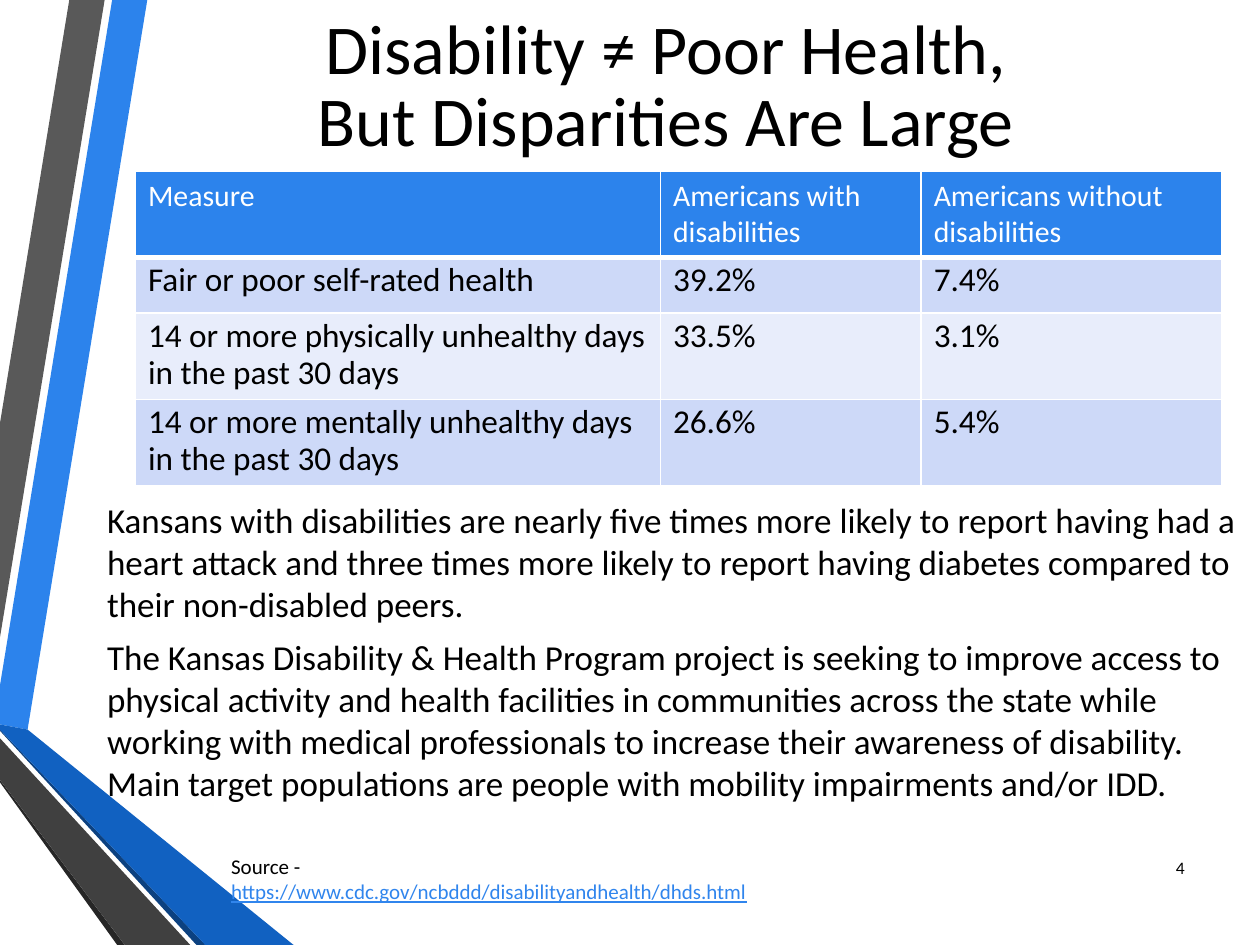
from lxml import etree
from pptx import Presentation
from pptx.dml.color import RGBColor
from pptx.enum.text import MSO_ANCHOR, MSO_AUTO_SIZE, PP_ALIGN
from pptx.oxml.ns import qn
from pptx.util import Pt

MIDDLE = MSO_ANCHOR.MIDDLE
CENTER, RIGHT = PP_ALIGN.CENTER, PP_ALIGN.RIGHT
NO_AUTOFIT = MSO_AUTO_SIZE.NONE

COLORS = {
    "blue": "2C83EC", "mid_blue": "1161C1", "navy": "0C4180",
    "gray": "595959", "dark_gray": "404040", "charcoal": "262626",
    "band": "CDD9F8", "light_band": "E8EDFB", "link": "3085ED",
    "black": "000000", "white": "FFFFFF",
}


def style(paragraph, size, color="black"):
    for run in paragraph.runs:
        run.font.name = "Calibri"
        run.font.size = Pt(size)
        run.font.bold = False
        run.font.color.rgb = RGBColor.from_string(COLORS[color])


def place(shape, left, top, width, height):
    shape.left, shape.top = Pt(left), Pt(top)
    shape.width, shape.height = Pt(width), Pt(height)


prs = Presentation()
prs.slide_width, prs.slide_height = Pt(720), Pt(540)
slide = prs.slides.add_slide(prs.slide_layouts[1])
shapes = slide.shapes
title, body = shapes.title, slide.placeholders[1]

# Ribbons on the left edge
ribbons = [
    ("blue", [(0, 391.7), (0, 414), (15.8, 416.9), (84.2, 0), (64.1, 0)]),
    ("gray", [(59.8, 0), (39.6, 0), (0, 241.9), (0, 364.3)]),
    ("charcoal", [(0, 445.7), (0, 447.1), (67, 540), (71.3, 540)]),
    ("navy", [(0, 416.9), (0, 417.6), (112.3, 540), (117.4, 540)]),
    ("mid_blue", [(0, 416.9), (117.4, 540), (167.8, 540), (15.8, 416.9), (0, 414)]),
    ("dark_gray", [(0, 445.7), (71.3, 540), (108.7, 540), (0, 421.9)]),
]
for color, points in ribbons:
    corners = [(Pt(x), Pt(y)) for x, y in points]
    outline = shapes.build_freeform(*corners[0])
    outline.add_line_segments(corners[1:], close=True)
    ribbon = outline.convert_to_shape()
    ribbon.shadow.inherit = False
    ribbon.fill.solid()
    ribbon.fill.fore_color.rgb = RGBColor.from_string(COLORS[color])
    ribbon.line.fill.background()

# Bring the placeholders in front of the ribbons
for placeholder in (title, body):
    shapes._spTree.append(placeholder._element)

# Title
place(title, 77, -27.4, 607, 156.2)
heading = title.text_frame
heading.text = "Disability ≠ Poor Health,\vBut Disparities Are Large"
heading.auto_size = NO_AUTOFIT
heading.vertical_anchor = MIDDLE
heading.paragraphs[0].alignment = CENTER
heading.paragraphs[0].line_spacing = Pt(41)
style(heading.paragraphs[0], 40)

# Body text
place(body, 54, 329.8, 676, 97.9)
findings = body.text_frame
findings.text = (
    "Kansans with disabilities are nearly five times more likely to report "
    "having had a heart attack and three times more likely to report having "
    "diabetes compared to their non-disabled peers.\n"
    "The Kansas Disability & Health Program project is seeking to improve "
    "access to physical activity and health facilities in communities across "
    "the state while working with medical professionals to increase their "
    "awareness of disability. Main target populations are people with "
    "mobility impairments and/or IDD."
)
findings.auto_size = NO_AUTOFIT
findings.vertical_anchor = MIDDLE
findings.margin_bottom = Pt(17)
for paragraph in findings.paragraphs:
    properties = paragraph._p.get_or_add_pPr()
    properties.set("marL", "0")
    properties.set("indent", "0")
    etree.SubElement(properties, qn("a:buNone"))
    paragraph.line_spacing = Pt(24)
    paragraph.space_before = Pt(0)
    paragraph.space_after = Pt(6)
    style(paragraph, 20)

# Health measures table
measures = [
    ("Measure", "Americans with disabilities", "Americans without disabilities"),
    ("Fair or poor self-rated health", "39.2%", "7.4%"),
    ("14 or more physically unhealthy days in the past 30 days", "33.5%", "3.1%"),
    ("14 or more mentally unhealthy days in the past 30 days", "26.6%", "5.4%"),
]
row_fills = ["blue", "band", "light_band", "band"]
table = shapes.add_table(4, 3, Pt(77.4), Pt(98), Pt(621), Pt(179)).table
for column, width in zip(table.columns, (300, 149, 172)):
    column.width = Pt(width)
for row, height in zip(table.rows, (49, 32, 49, 49)):
    row.height = Pt(height)
for r, texts in enumerate(measures):
    for c, text in enumerate(texts):
        cell = table.cell(r, c)
        cell.text = text
        paragraph = cell.text_frame.paragraphs[0]
        if r == 0:
            style(paragraph, 17, "white")
        else:
            paragraph.line_spacing = Pt(21)
            style(paragraph, 19)
        borders = cell._tc.get_or_add_tcPr()
        for side in ("lnL", "lnR", "lnT", "lnB"):
            weight = 3 if r == 0 and side == "lnB" else 1
            border = etree.SubElement(borders, qn(f"a:{side}"), w=str(Pt(weight)))
            line_fill = etree.SubElement(border, qn("a:solidFill"))
            etree.SubElement(line_fill, qn("a:srgbClr"), val=COLORS["white"])
        cell.fill.solid()
        cell.fill.fore_color.rgb = RGBColor.from_string(COLORS[row_fills[r]])

# Slide number
number = shapes.add_textbox(Pt(650), Pt(481), Pt(34), Pt(29)).text_frame
number.text = "4"
number.word_wrap = True
number.vertical_anchor = MIDDLE
number.paragraphs[0].alignment = RIGHT
style(number.paragraphs[0], 10)

# Source
source = shapes.add_textbox(Pt(125), Pt(484), Pt(348.5), Pt(36)).text_frame
source.text = "Source -\vhttps://www.cdc.gov/ncbddd/disabilityandhealth/dhds.html"
source.word_wrap = True
style(source.paragraphs[0], 12)
address = source.paragraphs[0].runs[1]
address.font.underline = True
address.font.color.rgb = RGBColor.from_string(COLORS["link"])

prs.save("out.pptx")
